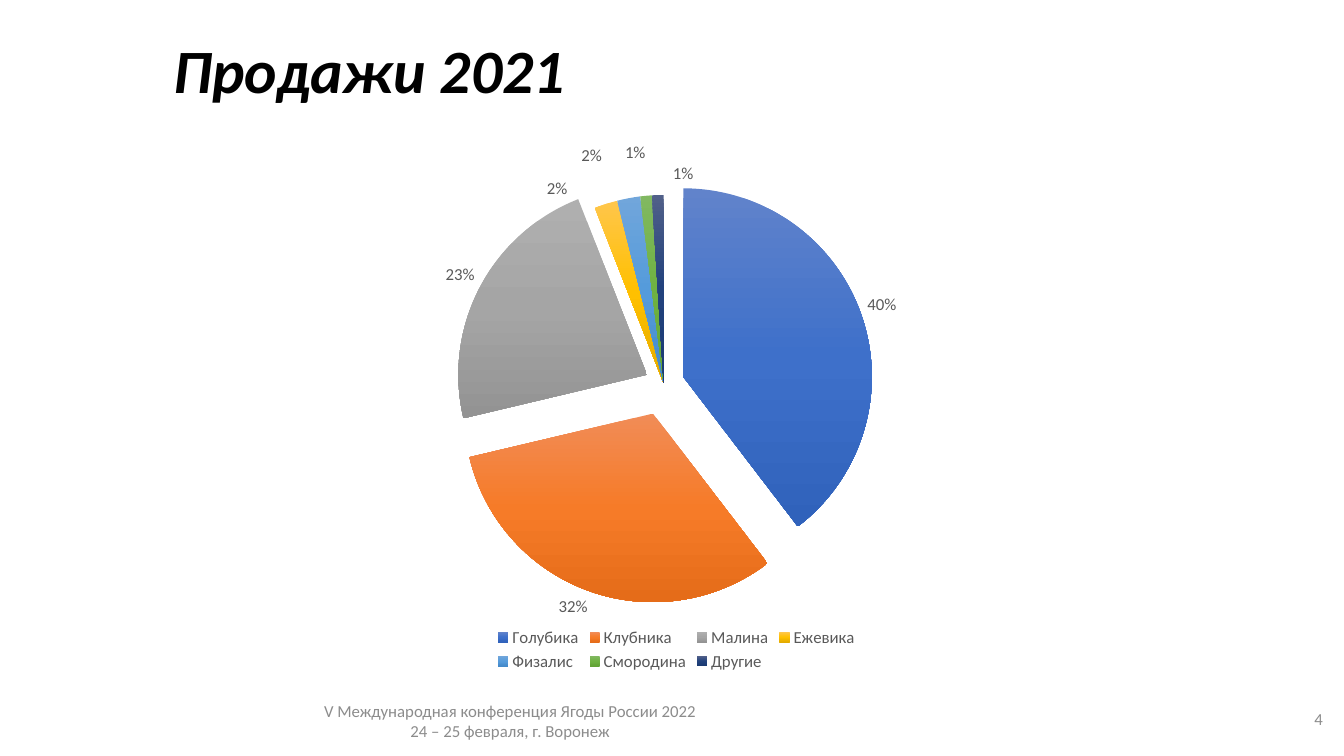
"""Build the 2021 berry sales slide with an exploded pie chart."""
from copy import deepcopy

from lxml.etree import SubElement
from pptx import Presentation
from pptx.chart.data import CategoryChartData
from pptx.dml.color import RGBColor
from pptx.enum.chart import XL_CHART_TYPE, XL_LABEL_POSITION, XL_LEGEND_POSITION
from pptx.enum.text import MSO_ANCHOR, PP_ALIGN
from pptx.oxml import parse_xml
from pptx.oxml.ns import nsdecls, qn
from pptx.util import Inches, Pt


def format_font(font, size, color, bold=False, italic=False):
    font.name = "Calibri"
    font.size = Pt(size)
    font.bold = bold
    font.italic = italic
    font.color.rgb = RGBColor.from_string(color)


def write_text(shape, text, size=12, color="8C8C8C", align=PP_ALIGN.LEFT,
               bold=False, italic=False, line_spacing=1.0):
    frame = shape.text_frame
    frame.word_wrap = True
    frame.vertical_anchor = MSO_ANCHOR.MIDDLE
    frame.text = text
    for paragraph in frame.paragraphs:
        paragraph.alignment = align
        paragraph.line_spacing = line_spacing
        format_font(paragraph.font, size, color, bold, italic)


presentation = Presentation()
presentation.slide_width = Inches(13.33)
presentation.slide_height = Inches(7.5)
slide = presentation.slides.add_slide(presentation.slide_layouts[5])

title = slide.shapes.title
title.left, title.top = Inches(1.62), Inches(0)
title.width, title.height = Inches(10.1), Inches(1.45)
write_text(title, "Продажи 2021", size=44, color="000000",
           bold=True, italic=True, line_spacing=0.9)

berries = [
    ("Голубика", 40, 11, ("6183CB", "3E70CA", "3062BB")),
    ("Клубника", 32, 17, ("F18C57", "F67B28", "E56C19")),
    ("Малина", 23, 10, ("AFAFAF", "A5A5A5", "939393")),
    ("Ежевика", 2, 0, ("FFC64B", "FFC000", "E3AB00")),
    ("Физалис", 2, 0, ("71A6DB", "559BDB", "448ACA")),
    ("Смородина", 1, 0, ("81B861", "6FB242", "62A336")),
    ("Другие", 1, 0, ("516089", "22427D", "1A3A72")),
]
label_shifts = {3: (-0.05, 0), 4: (-0.035, -0.045), 5: (0, -0.045), 6: (0.035, -0.01)}

chart_data = CategoryChartData(number_format="#,##0")
chart_data.categories = [berry[0] for berry in berries]
chart_data.add_series("Продажи", [berry[1] for berry in berries])
chart = slide.shapes.add_chart(
    XL_CHART_TYPE.PIE, Inches(3.07), Inches(0.81), Inches(7.28), Inches(5.89), chart_data
).chart
chart.has_title = False
format_font(chart.font, 12, "595959")
chart.has_legend = True
chart.legend.position = XL_LEGEND_POSITION.BOTTOM
chart.legend.include_in_layout = False
format_font(chart.legend.font, 12, "595959")

plot = chart.plots[0]
plot.vary_by_categories = True
series = plot.series[0]
labels = series.data_labels
labels.show_percentage = True
labels.show_value = False
labels.number_format = "0%"
labels.number_format_is_linked = False
labels.position = XL_LABEL_POSITION.OUTSIDE_END
format_font(labels.font, 12, "595959")

for index, (name, value, explosion, colors) in enumerate(berries):
    point = series.points[index]
    fill = point.format.fill
    fill.gradient()
    fill.gradient_angle = 270
    stop_list = chart.element.xpath(".//c:dPt//a:gsLst")[-1]
    stop_list.insert(1, deepcopy(stop_list[0]))
    for stop, position, color in zip(fill.gradient_stops, (0, 0.5, 1), colors):
        stop.position = position
        stop.color.rgb = RGBColor.from_string(color)
    point.format.line.fill.background()
    if explosion:
        properties = chart.element.xpath(".//c:dPt/c:spPr")[-1]
        properties.addprevious(
            parse_xml(f'<c:explosion {nsdecls("c")} val="{explosion}"/>'))

for index, (shift_x, shift_y) in label_shifts.items():
    label = series.points[index].data_label
    format_font(label.font, 12, "595959")
    label.position = XL_LABEL_POSITION.OUTSIDE_END
    element = chart.element.xpath(f".//c:dLbl[c:idx/@val='{index}']")[0]
    element.find(qn("c:showVal")).set("val", "0")
    element.find(qn("c:showPercent")).set("val", "1")
    layout = parse_xml(f'<c:layout {nsdecls("c")}/>')
    manual = SubElement(layout, qn("c:manualLayout"))
    SubElement(manual, qn("c:x")).set("val", str(shift_x))
    SubElement(manual, qn("c:y")).set("val", str(shift_y))
    element.find(qn("c:idx")).addnext(layout)

for leader_lines in chart.element.xpath(".//c:showLeaderLines"):
    leader_lines.set("val", "0")

plot_area = chart.element.xpath(".//c:plotArea")[0]
for old_layout in plot_area.findall(qn("c:layout")):
    plot_area.remove(old_layout)
plot_layout = parse_xml(f'<c:layout {nsdecls("c")}/>')
manual = SubElement(plot_layout, qn("c:manualLayout"))
for tag, setting in (("layoutTarget", "inner"), ("xMode", "edge"), ("yMode", "edge"),
                     ("x", "0.069"), ("y", "0.191"), ("w", "0.827"), ("h", "0.635")):
    SubElement(manual, qn(f"c:{tag}")).set("val", setting)
plot_area.insert(0, plot_layout)

footer = slide.shapes.add_textbox(Inches(2.12), Inches(6.95), Inches(5.88), Inches(0.4))
write_text(footer, "V Международная конференция Ягоды России 2022\n24 – 25 февраля, г. Воронеж",
           align=PP_ALIGN.CENTER)
slide_number = slide.shapes.add_textbox(Inches(12.42), Inches(6.93), Inches(0.8), Inches(0.4))
write_text(slide_number, "4", align=PP_ALIGN.RIGHT)

presentation.save("out.pptx")
